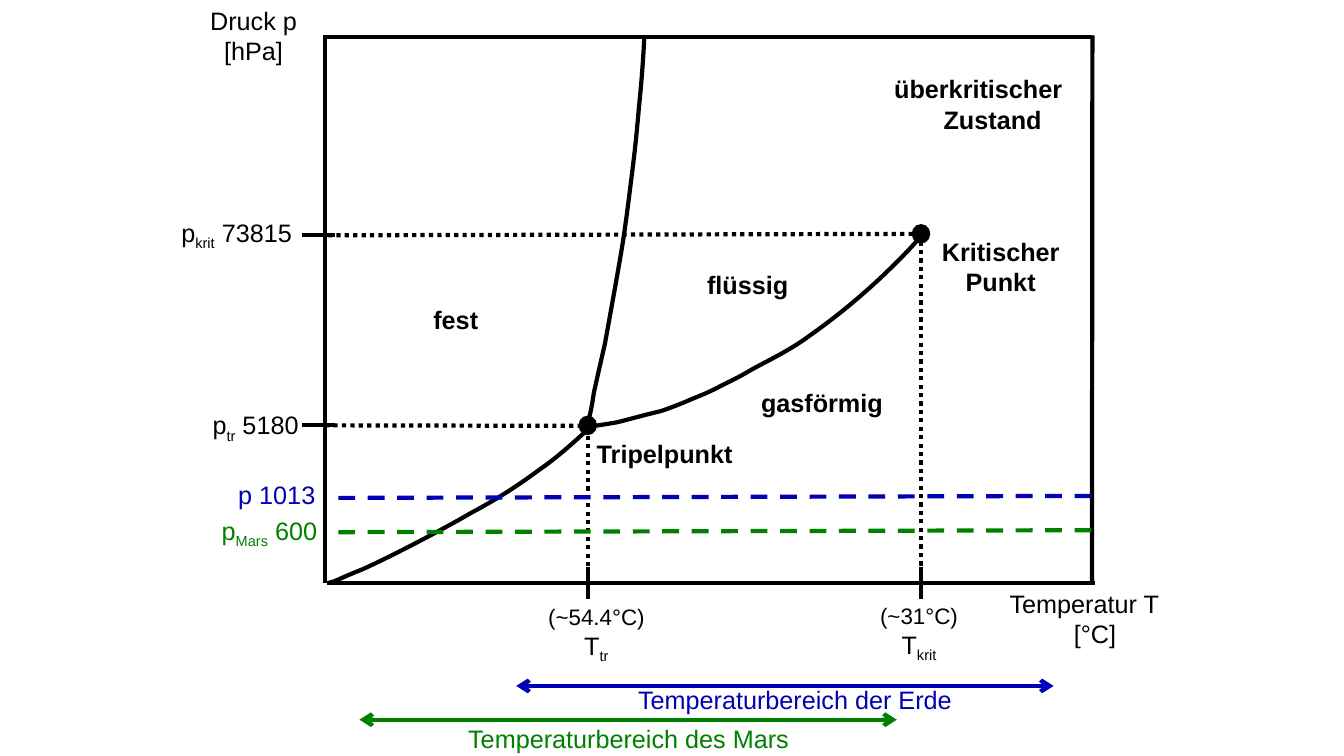
import lxml.etree
import pptx
import pptx.dml.color
import pptx.enum.dml
import pptx.enum.shapes
import pptx.enum.text
import pptx.oxml.ns
import pptx.util

COLORS = {"ink": "000000", "earth": "0000B4", "mars": "008000"}
CELL = pptx.util.Inches(0.1)  # one grid column or row
ALIGN = {
    "l": pptx.enum.text.PP_ALIGN.LEFT,
    "c": pptx.enum.text.PP_ALIGN.CENTER,
    "r": pptx.enum.text.PP_ALIGN.RIGHT,
}
DOTS = pptx.enum.dml.MSO_LINE.ROUND_DOT
DASHES = pptx.enum.dml.MSO_LINE.DASH
qn = pptx.oxml.ns.qn


def grid(*cells):
    """Turn columns or rows into slide lengths."""
    return [round(cell * CELL) for cell in cells]


def rgb(name):
    return pptx.dml.color.RGBColor.from_string(COLORS[name])


class Diagram:
    def __init__(self, slide, font="Arial", size=18, weight=3):
        self.shapes = slide.shapes
        self.font, self.size, self.weight = font, size, weight

    def stroke(self, line, color, dash=None):
        line.width = pptx.util.Pt(self.weight)
        line.color.rgb = rgb(color)
        if dash:
            line.dash_style = dash

    def line(self, x1, y1, x2, y2, color="ink", dash=None, arrows=False):
        connector = self.shapes.add_connector(
            pptx.enum.shapes.MSO_CONNECTOR.STRAIGHT, *grid(x1, y1, x2, y2))
        self.stroke(connector.line, color, dash)
        if arrows:
            for end in ("a:headEnd", "a:tailEnd"):
                lxml.etree.SubElement(connector.line._get_or_add_ln(), qn(end), type="arrow")
        lxml.etree.SubElement(connector._element.spPr, qn("a:effectLst"))

    def curve(self, start, *segments):
        """Draw cubic segments, each (x1, y1, x2, y2, x, y)."""
        builder = self.shapes.build_freeform(*grid(*start))
        for segment in segments:
            lengths = grid(*segment)
            builder.add_line_segments(list(zip(lengths[::2], lengths[1::2])), close=False)
        outline = builder.convert_to_shape()
        steps = list(outline._element.iter(qn("a:lnTo")))
        for first in range(0, len(steps), 3):
            cubic = lxml.etree.Element(qn("a:cubicBezTo"))
            steps[first].addprevious(cubic)
            for step in steps[first:first + 3]:
                cubic.append(step[0])
                step.getparent().remove(step)
        outline.shadow.inherit = False
        outline.fill.background()
        self.stroke(outline.line, "ink")

    def point(self, x, y, width=1.7, height=1.8):
        dot = self.shapes.add_shape(
            pptx.enum.shapes.MSO_SHAPE.OVAL,
            *grid(x - width / 2, y - height / 2, width, height))
        dot.shadow.inherit = False
        dot.fill.solid()
        dot.fill.fore_color.rgb = rgb("ink")
        dot.line.color.rgb = rgb("ink")
        dot.line.width = pptx.util.Pt(1)

    def text(self, content, x, y, width, height, *, color="ink", bold=False,
             aligns="l", sizes=(), middle=False, wrap=True):
        """Write one paragraph per line; parts between bars are subscripts."""
        frame = self.shapes.add_textbox(*grid(x, y, width, height)).text_frame
        frame.word_wrap = wrap
        frame.auto_size = pptx.enum.text.MSO_AUTO_SIZE.SHAPE_TO_FIT_TEXT
        anchors = pptx.enum.text.MSO_ANCHOR
        frame.vertical_anchor = anchors.MIDDLE if middle else anchors.TOP
        for row, words in enumerate(content.split("\n")):
            paragraph = frame.add_paragraph() if row else frame.paragraphs[0]
            paragraph.alignment = ALIGN[aligns[min(row, len(aligns) - 1)]]
            for index, part in enumerate(words.split("|")):
                run = paragraph.add_run()
                run.text = part
                run.font.name = self.font
                run.font.size = pptx.util.Pt(sizes[row] if sizes else self.size)
                run.font.bold = bold
                run.font.color.rgb = rgb(color)
                if index % 2:
                    run._r.get_or_add_rPr().set("baseline", "-25000")


def main():
    deck = pptx.Presentation()
    deck.slide_width = pptx.util.Inches(13.33)
    deck.slide_height = pptx.util.Inches(7.5)
    diagram = Diagram(deck.slides.add_slide(deck.slide_layouts[6]))

    left, right, top, bottom = 32.2, 108.35, 3.7, 57.85
    triple_x, triple_y = 58.3, 42.2
    critical_x, critical_y = 91.35, 23.35

    # Frame
    diagram.line(left, 3.5, left, bottom)
    diagram.line(108.6, bottom, 32.4, bottom)
    diagram.line(right, 3.5, 108.3, 58)
    diagram.line(right, top, left, top)

    # Special points with their guides and axis ticks
    diagram.line(critical_x, 22.3, critical_x, bottom, dash=DOTS)
    diagram.line(92.2, 23.2, 32.4, critical_y, dash=DOTS)
    diagram.line(57.7, 42.25, 32.4, triple_y, dash=DOTS)
    diagram.line(triple_x, bottom, triple_x, 43.1, dash=DOTS)
    for x, y, dot_y in ((triple_x, triple_y, triple_y), (critical_x, critical_y, 23.2)):
        diagram.point(x, dot_y)
        diagram.line(30, y, 33.2, y)
        diagram.line(x, 56.3, x, 59.45)

    # Phase boundaries: boiling, melting, sublimation
    diagram.curve(
        (58.2, 42.3),
        (58.9, 42.3, 60, 42.1, 61.2, 41.9), (62.4, 41.6, 64.2, 41.1, 65.5, 40.8),
        (66.7, 40.4, 67.7, 40, 68.6, 39.6), (69.6, 39.2, 70.1, 39, 71.1, 38.5),
        (72, 38, 73, 37.6, 74.5, 36.7), (76.1, 35.8, 78.3, 34.8, 80.3, 33.3),
        (82.3, 31.9, 84.3, 30.3, 86.1, 28.7), (87.9, 27.1, 90.2, 24.8, 91.1, 23.7))
    diagram.curve(
        (58.2, 42.3),
        (58.5, 41.3, 58.7, 40.4, 58.9, 39), (59.2, 37.6, 59.5, 36.3, 60, 34.1),
        (60.4, 31.9, 61, 28.6, 61.5, 25.7), (62, 22.9, 62.4, 19.5, 62.7, 17.1),
        (63, 14.7, 63.1, 13.7, 63.3, 11.5), (63.5, 9.2, 63.7, 7.7, 63.9, 3.8))
    diagram.curve(
        (32.5, bottom),
        (33.3, 57.7, 33.4, 57.5, 35.9, 56.5), (38.4, 55.4, 43.8, 52.6, 46.7, 50.9),
        (49.7, 49.3, 51.6, 48, 53.5, 46.6), (55.4, 45.3, 57.2, 43.6, 58.1, 42.8))

    # Phases and points
    diagram.text("überkritischer\nZustand", 87.7, 7.05, 21.5, 6.5,
                 bold=True, aligns="lc", middle=True)
    diagram.text("Kritischer Punkt", 89.3, 24.6, 19.9, 3.7,
                 bold=True, aligns="c", middle=True)
    for label, x, y, width in (
        ("Tripelpunkt", 58.2, 43, 18.1),
        ("fest", 42, 29.7, 8.4),
        ("flüssig", 69.15, 26.2, 13.5),
        ("gasförmig", 74.5, 37.9, 16.3),
    ):
        diagram.text(label, x, y, width, 3.7, bold=True)

    # Axis titles and values
    diagram.text("Temperatur T\n[°C]", 99.15, 57.85, 18.9, 10.1, aligns="lc")
    diagram.text("Druck p\n[hPa]", 17.5, 0, 15.3, 6.5, aligns="c")
    diagram.text("p|krit| 73815", 17, 21.4, 17, 3.7, middle=True)
    diagram.text("p|tr| 5180", 20.1, 40.5, 14.8, 3.7, middle=True)
    diagram.text("(~54.4°C)\nT|tr", 52.05, 59.55, 14.2, 6.7,
                 aligns="c", sizes=(16, 18), middle=True)
    diagram.text("(~31°C)\nT|krit", 83.8, 59.45, 14.7, 6.7,
                 aligns="c", sizes=(16, 18), middle=True)

    # Surface pressure and temperature range of each planet
    for color, pressure, x, y, width, level, name, name_x, name_y, name_width, start, range_y in (
        ("earth", "p 1013", 15.05, 47.05, 17.2, 49.2,
         "Temperaturbereich der Erde", 62.3, 67.4, 33.4, 51.2, 68.05),
        ("mars", "p|Mars| 600", 16.85, 50.8, 15.6, 52.6,
         "Temperaturbereich des Mars", 45.45, 71.25, 34.1, 35.65, 71.4),
    ):
        diagram.line(108.25, level, 32.45, level + 0.2, color=color, dash=DASHES)
        diagram.text(pressure, x, y, width, 4, color=color, aligns="r", middle=True)
        diagram.line(start + 53.3, range_y, start, range_y, color=color, arrows=True)
        diagram.text(name, name_x, name_y, name_width, 4, color=color, wrap=False)

    deck.save("out.pptx")


if __name__ == "__main__":
    main()
